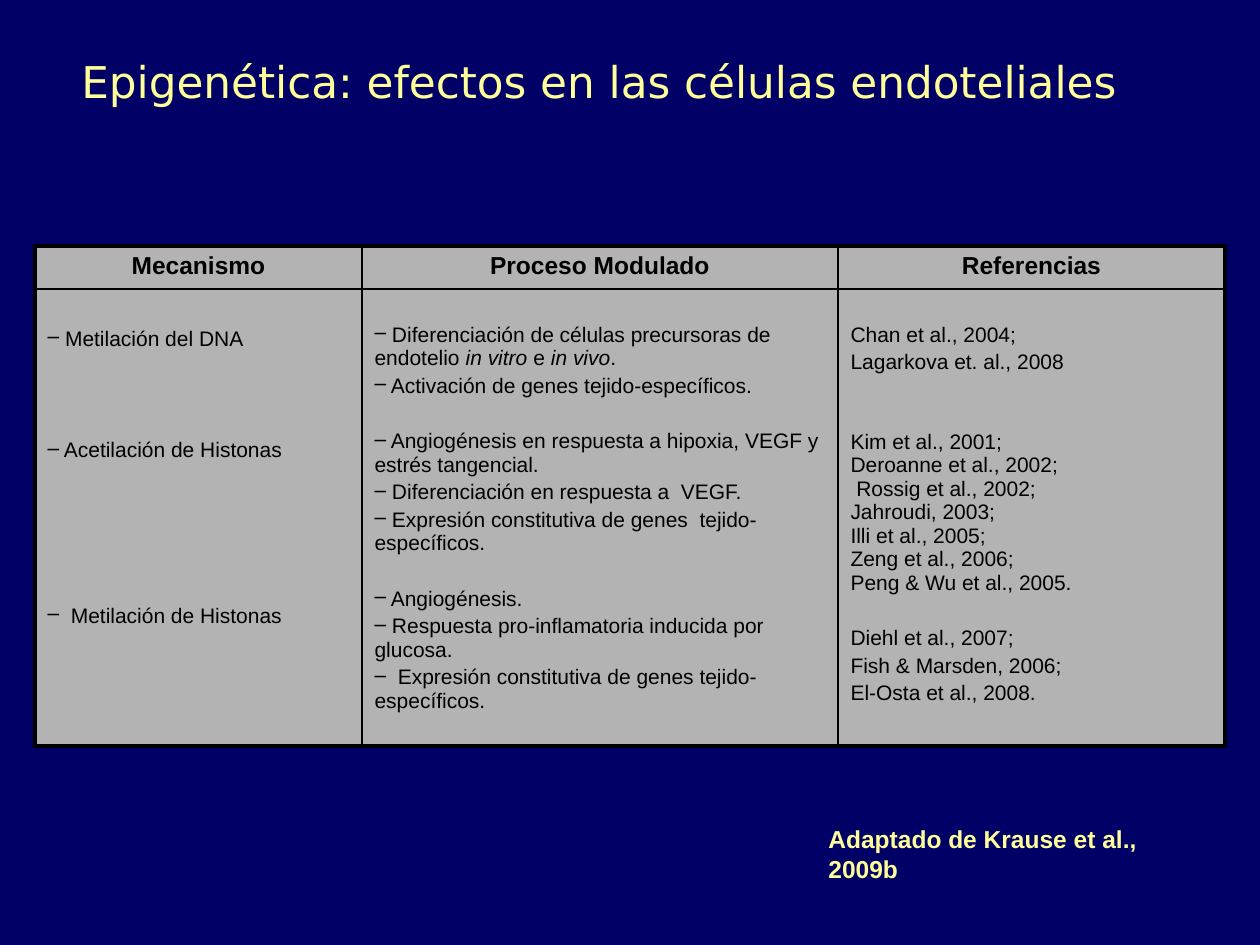
"""Build the slide on epigenetic effects in endothelial cells."""
from dataclasses import dataclass

from lxml import etree
from pptx import Presentation
from pptx import util as u
from pptx.dml import color
from pptx.enum import text
from pptx.oxml import ns

PX = 914400 / 126


@dataclass(frozen=True)
class Theme:
    back: str = "000066"
    pale: str = "FFFF99"
    ink: str = "000000"
    cell: str = "B3B3B3"
    font: str = "Arial"
    title: str = "DejaVu Sans"
    big: int = 25
    head: int = 14
    body: int = 12
    thick: float = 2.25
    thin: float = 1


@dataclass(frozen=True)
class Line:
    words: str
    gap: int = 4
    dash: bool = True


@dataclass(frozen=True)
class Column:
    head: str
    width: int
    top: int
    lines: tuple[Line, ...]


@dataclass(frozen=True)
class Label:
    words: str
    box: tuple[int, int, int, int]
    font: str
    size: int
    bold: bool


T = Theme()
COLS = (
    Column("Mecanismo", 327, 38, (
        Line(" Metilación del DNA", 0),
        Line(" Acetilación de Histonas", 88),
        Line("  Metilación de Histonas", 142),
    )),
    Column("Proceso Modulado", 476, 34, (
        Line(" Diferenciación de células precursoras de endotelio *in vitro* e *in vivo*.", 0),
        Line(" Activación de genes tejido-específicos."),
        Line(" Angiogénesis en respuesta a hipoxia, VEGF y estrés tangencial.", 32),
        Line(" Diferenciación en respuesta a  VEGF."),
        Line(" Expresión constitutiva de genes  tejido-específicos."),
        Line(" Angiogénesis.", 32),
        Line(" Respuesta pro-inflamatoria inducida por glucosa."),
        Line("  Expresión constitutiva de genes tejido-específicos."),
    )),
    Column("Referencias", 387, 34, (
        Line("Chan et al., 2004;", 0, False),
        Line("Lagarkova et. al., 2008", 4, False),
        Line("Kim et al., 2001;", 56, False),
        Line("Deroanne et al., 2002;", 0, False),
        Line(" Rossig et al., 2002;", 0, False),
        Line("Jahroudi, 2003;", 0, False),
        Line("Illi et al., 2005;", 0, False),
        Line("Zeng et al., 2006;", 0, False),
        Line("Peng & Wu et al., 2005.", 0, False),
        Line("Diehl et al., 2007;", 32, False),
        Line("Fish & Marsden, 2006;", 4, False),
        Line("El-Osta et al., 2008.", 4, False),
    )),
)
ROWS = (43, 457)
LABELS = (
    Label("Adaptado de Krause et al., 2009b", (816, 818, 408, 72), T.font, T.head, True),
    Label("Epigenética: efectos en las células endoteliales", (69, 49, 1092, 64),
          T.title, T.big, False),
)


def px(size: int) -> u.Emu:
    return u.Emu(round(size * PX))


def rgb(code: str) -> color.RGBColor:
    return color.RGBColor.from_string(code)


def style(run, font: str, size: int, tint: str, bold: bool) -> None:
    run.font.name = font
    run.font.size = u.Pt(size)
    run.font.bold = bold
    run.font.color.rgb = rgb(tint)


def write(par, line: Line) -> None:
    par.space_before = px(line.gap)
    if line.dash:
        props = par._p.get_or_add_pPr()
        props.set("marL", "0")
        props.set("indent", "0")
        etree.SubElement(props, ns.qn("a:buFontTx"))
        etree.SubElement(props, ns.qn("a:buChar")).set("char", "–")
    for n, part in enumerate(line.words.split("*")):
        run = par.add_run()
        run.text = part
        style(run, T.font, T.body, T.ink, False)
        run.font.italic = n % 2 == 1


def edge(cell, row: int, col: int) -> None:
    outer = {"L": col == 0, "R": col == len(COLS) - 1,
             "T": row == 0, "B": row == len(ROWS) - 1}
    props = cell._tc.get_or_add_tcPr()
    for side, rim in outer.items():
        line = etree.SubElement(props, ns.qn(f"a:ln{side}"))
        line.set("w", str(u.Pt(T.thick if rim else T.thin)))
        fill = etree.SubElement(line, ns.qn("a:solidFill"))
        etree.SubElement(fill, ns.qn("a:srgbClr")).set("val", T.ink)
    cell.fill.solid()
    cell.fill.fore_color.rgb = rgb(T.cell)


def table(slide) -> None:
    wide = sum(c.width for c in COLS)
    grid = slide.shapes.add_table(len(ROWS), len(COLS), px(35), px(246),
                                  px(wide), px(sum(ROWS))).table
    grid.first_row = grid.horz_banding = False
    for row, high in enumerate(ROWS):
        grid.rows[row].height = px(high)
    for n, col in enumerate(COLS):
        grid.columns[n].width = px(col.width)
        head, body = grid.cell(0, n), grid.cell(1, n)
        edge(head, 0, n)
        edge(body, 1, n)
        head.text_frame.text = col.head
        par = head.text_frame.paragraphs[0]
        par.alignment = text.PP_ALIGN.CENTER
        style(par.runs[0], T.font, T.head, T.ink, True)
        body.margin_top = px(col.top)
        frame = body.text_frame
        for k, line in enumerate(col.lines):
            write(frame.add_paragraph() if k else frame.paragraphs[0], line)


def label(slide, item: Label) -> None:
    frame = slide.shapes.add_textbox(*map(px, item.box)).text_frame
    frame.word_wrap = True
    frame.text = item.words
    style(frame.paragraphs[0].runs[0], item.font, item.size, T.pale, item.bold)


def main() -> None:
    deck = Presentation()
    deck.slide_width, deck.slide_height = px(1260), px(945)
    slide = deck.slides.add_slide(deck.slide_layouts[6])
    slide.background.fill.solid()
    slide.background.fill.fore_color.rgb = rgb(T.back)
    table(slide)
    for item in LABELS:
        label(slide, item)
    deck.save("out.pptx")


if __name__ == "__main__":
    main()
